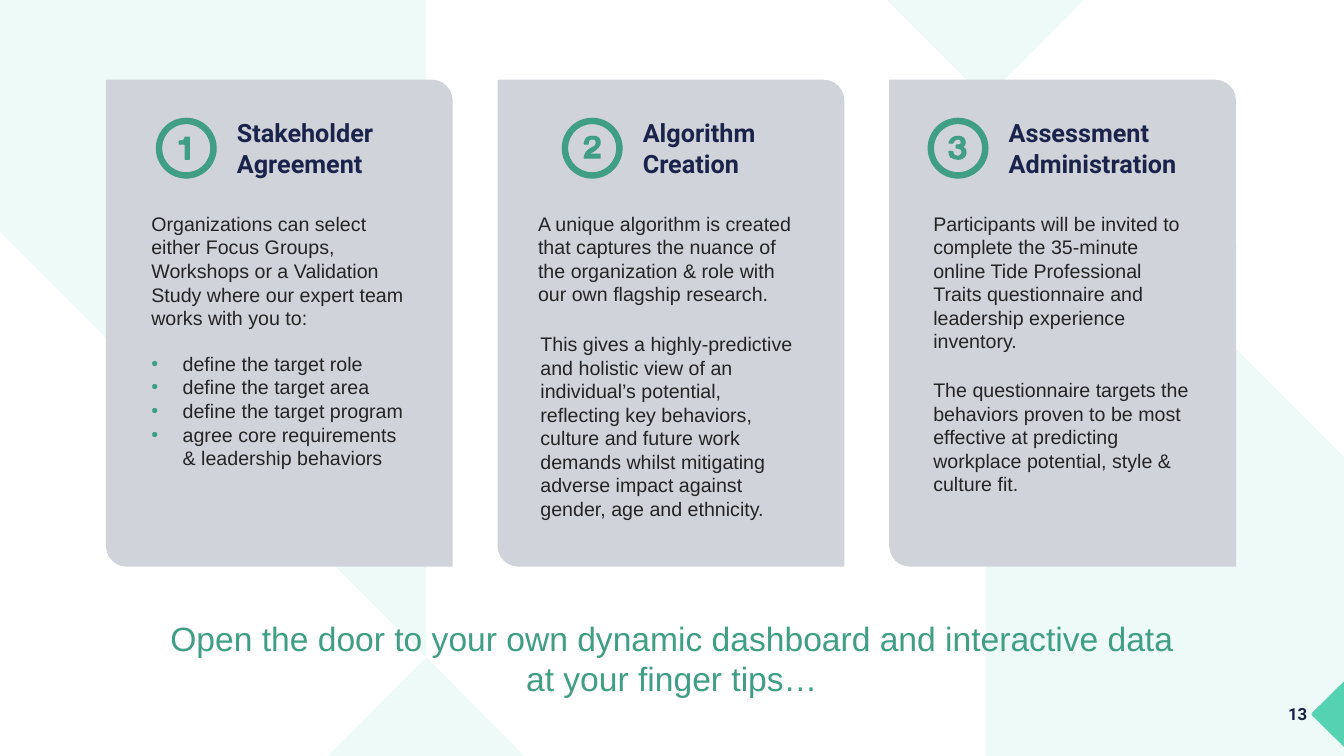
from lxml.etree import SubElement
from pptx import Presentation
from pptx.dml.color import RGBColor
from pptx.enum.shapes import MSO_SHAPE
from pptx.enum.text import MSO_ANCHOR, MSO_AUTO_SIZE, PP_ALIGN
from pptx.oxml.ns import qn
from pptx.util import Cm, Pt

MINT = RGBColor(0x55, 0xD2, 0xB1)
GREEN = RGBColor(0x40, 0x9E, 0x85)
NAVY = RGBColor(0x1A, 0x24, 0x4A)
INK = RGBColor(0x24, 0x24, 0x24)
CARD_GREY = RGBColor(0xD1, 0xD3, 0xDB)

CARD_LEFT, CARD_PITCH = 2.67, 9.87
RING_TOP, RING_SIZE = 2.98, 1.51

BACKDROP = [
    [(0, 0), (10.74, 0), (10.74, 16.56), (0, 5.84)],
    [(22.35, 0), (27.31, 0), (24.84, 2.49)],
    [(24.84, 2.49), (33.87, 11.51), (33.87, 19.05), (24.84, 19.05)],
    [(10.74, 16.56), (13.21, 19.05), (8.26, 19.05)],
]
PAGE_MARKER = [(33.87, 18.82), (33.07, 18.03), (33.05, 18), (33.07, 17.96), (33.87, 17.17)]

# Outlines use hundredths of a centimetre from the ring centre
NUMERALS = [
    [(-3, -10), (-18, -10), (-18, -18), (-10, -18, -3, -20, -3, -28),
     (8, -28), (8, 28), (-3, 28)],
    [(-15, 10), (-10, 5, -5, 0, 3, -3), (8, -5, 10, -10, 10, -15),
     (10, -18, 8, -23, 3, -23), (0, -23), (-3, -23, -5, -23, -8, -20),
     (-8, -18, -10, -15, -10, -10), (-20, -10), (-20, -15, -18, -20, -15, -25),
     (-13, -28, -5, -30, 3, -30), (13, -30, 20, -25, 20, -15),
     (20, -5, 15, -3, 10, 3), (5, 8, -3, 10, -8, 15),
     (20, 15), (20, 25), (-20, 25), (-20, 20, -18, 15, -15, 10)],
    [(-18, 23), (-20, 20, -23, 15, -23, 8), (-13, 8), (-13, 15, -10, 20, 0, 20),
     (5, 20, 10, 15, 10, 10), (10, 3, 5, 0, -3, 0), (-5, 0), (-5, -8), (-3, -8),
     (5, -8, 8, -10, 8, -15), (8, -20, 5, -23, 0, -23),
     (-8, -23, -10, -18, -13, -13), (-23, -13), (-20, -23, -13, -30, 0, -30),
     (10, -30, 18, -25, 18, -15), (18, -8, 15, -5, 10, -3),
     (18, 0, 20, 3, 20, 10), (20, 23, 10, 28, 0, 28), (-5, 28, -13, 25, -18, 23)],
]

STEPS = [
    ("Stakeholder Agreement", 3.94, 5.72, 4.8, []),
    ("Algorithm Creation", 14.17, 15.95, 4.8, [
        ("A unique algorithm is created that captures the nuance of the organization "
         "& role with our own flagship research.", 13.31, 5.21, 7.06, 2.64),
        ("This gives a highly-predictive and holistic view of an individual’s potential, "
         "reflecting key behaviors, culture and future work demands whilst mitigating "
         "adverse impact against gender, age and ethnicity.", 13.37, 8.24, 6.99, 5.05),
    ]),
    ("Assessment Administration", 23.39, 25.17, 5.21, [
        ("Participants will be invited to complete the 35-minute online Tide Professional "
         "Traits questionnaire and leadership experience inventory.",
         23.27, 5.21, 7.04, 3.84),
        ("The questionnaire targets the behaviors proven to be most effective at "
         "predicting workplace potential, style & culture fit.", 23.27, 9.4, 7.39, 3.25),
    ]),
]
INTRO = ("Organizations can select either Focus Groups, Workshops or a Validation Study "
         "where our expert team works with you to:")
TASKS = ["define the target role", "define the target area", "define the target program",
         "agree core requirements & leadership behaviors"]
CLOSING = "Open the door to your own dynamic dashboard and interactive data at your finger tips…"


def paint(shape, color, outlined=False):
    shape.shadow.inherit = False
    shape.fill.solid()
    shape.fill.fore_color.rgb = color
    if outlined:
        shape.line.color.rgb = color
        shape.line.width = Pt(0.75)
    else:
        shape.line.fill.background()


def add_outline(slide, points, color, opacity=100, outlined=False):
    corners = [(Cm(x), Cm(y)) for x, y in points]
    builder = slide.shapes.build_freeform(*corners[0])
    builder.add_line_segments(corners[1:], close=True)
    outline = builder.convert_to_shape()
    paint(outline, color, outlined)
    if opacity < 100:
        tint = outline.element.spPr.find(qn("a:solidFill"))[0]
        SubElement(tint, qn("a:alpha"), val=str(opacity * 1000))


def flatten(segments, steps=8):
    points = [segments[0]]
    for segment in segments[1:]:
        if len(segment) == 2:
            points.append(segment)
            continue
        curve = [points[-1], segment[:2], segment[2:4], segment[4:]]
        for step in range(1, steps + 1):
            t = step / steps
            weights = ((1 - t) ** 3, 3 * t * (1 - t) ** 2, 3 * t * t * (1 - t), t ** 3)
            points.append(tuple(sum(w * p[axis] for w, p in zip(weights, curve))
                                for axis in (0, 1)))
    return points


def add_badge(slide, numeral, left):
    ring = slide.shapes.add_shape(MSO_SHAPE.DONUT, Cm(left), Cm(RING_TOP),
                                  Cm(RING_SIZE), Cm(RING_SIZE))
    ring.adjustments[0] = 0.09
    paint(ring, GREEN, outlined=True)
    center_x, center_y = left + RING_SIZE / 2, RING_TOP + RING_SIZE / 2
    add_outline(slide, [(center_x + x / 100, center_y + y / 100)
                        for x, y in flatten(numeral)], GREEN, outlined=True)


def add_card(slide, left):
    card = slide.shapes.add_shape(MSO_SHAPE.ROUND_2_DIAG_RECTANGLE, Cm(left), Cm(2.01),
                                  Cm(8.74), Cm(12.27))
    card.adjustments[0] = 0
    card.adjustments[1] = 0.06
    paint(card, CARD_GREY)


def write(paragraph, words, size, color, face="Arial", bold=False):
    run = paragraph.add_run()
    run.text = words
    run.font.size = Pt(size)
    run.font.name = face
    run.font.bold = bold
    run.font.color.rgb = color


def add_words(slide, words, left, top, width, height, size=14, color=INK,
              face="Arial", bold=False):
    box = slide.shapes.add_textbox(Cm(left), Cm(top), Cm(width), Cm(height))
    box.text_frame.word_wrap = True
    write(box.text_frame.paragraphs[0], words, size, color, face, bold)


def bring_forward(placeholder, left, top, width, height):
    placeholder.left, placeholder.top = Cm(left), Cm(top)
    placeholder.width, placeholder.height = Cm(width), Cm(height)
    placeholder.element.getparent().append(placeholder.element)
    frame = placeholder.text_frame
    frame.word_wrap = True
    frame.auto_size = MSO_AUTO_SIZE.NONE
    frame.vertical_anchor = MSO_ANCHOR.TOP
    return frame


def set_bullet(paragraph, bulleted):
    properties = paragraph._p.get_or_add_pPr()
    indent = Cm(0.79) if bulleted else 0
    properties.set("marL", str(indent))
    properties.set("indent", str(-indent))
    if bulleted:
        SubElement(SubElement(properties, qn("a:buClr")), qn("a:srgbClr"), val=str(GREEN))
        SubElement(properties, qn("a:buFont"), typeface="Arial")
        SubElement(properties, qn("a:buChar"), char="•")
    else:
        SubElement(properties, qn("a:buNone"))


def fill_task_list(placeholder):
    frame = bring_forward(placeholder, 3.56, 5.21, 6.99, 7.34)
    for index, words in enumerate([INTRO] + TASKS):
        paragraph = frame.add_paragraph() if index else frame.paragraphs[0]
        set_bullet(paragraph, bulleted=index > 0)
        paragraph.space_before = Pt(16 if index == 1 else 0)
        write(paragraph, words, 14, INK)


def fill_closing(placeholder):
    paragraph = bring_forward(placeholder, 3.66, 15.44, 26.54, 2.31).paragraphs[0]
    paragraph.alignment = PP_ALIGN.CENTER
    write(paragraph, CLOSING, 24, GREEN)


def main():
    deck = Presentation()
    deck.slide_width, deck.slide_height = Cm(33.87), Cm(19.05)
    slide = deck.slides.add_slide(deck.slide_layouts[1])
    for points in BACKDROP:
        add_outline(slide, points, MINT, opacity=10)
    add_outline(slide, PAGE_MARKER, MINT)
    add_words(slide, "13", 32.21, 17.6, 1.02, 1.27, 12, NAVY, "Roboto", True)
    for index, (heading, ring_left, heading_left, width, passages) in enumerate(STEPS):
        add_card(slide, CARD_LEFT + index * CARD_PITCH)
        add_words(slide, heading, heading_left, 2.84, width, 1.8, 18, NAVY, "Roboto", True)
        add_badge(slide, NUMERALS[index], ring_left)
        for passage in passages:
            add_words(slide, *passage)
    fill_task_list(slide.placeholders[1])
    fill_closing(slide.shapes.title)
    deck.save("out.pptx")


if __name__ == "__main__":
    main()
